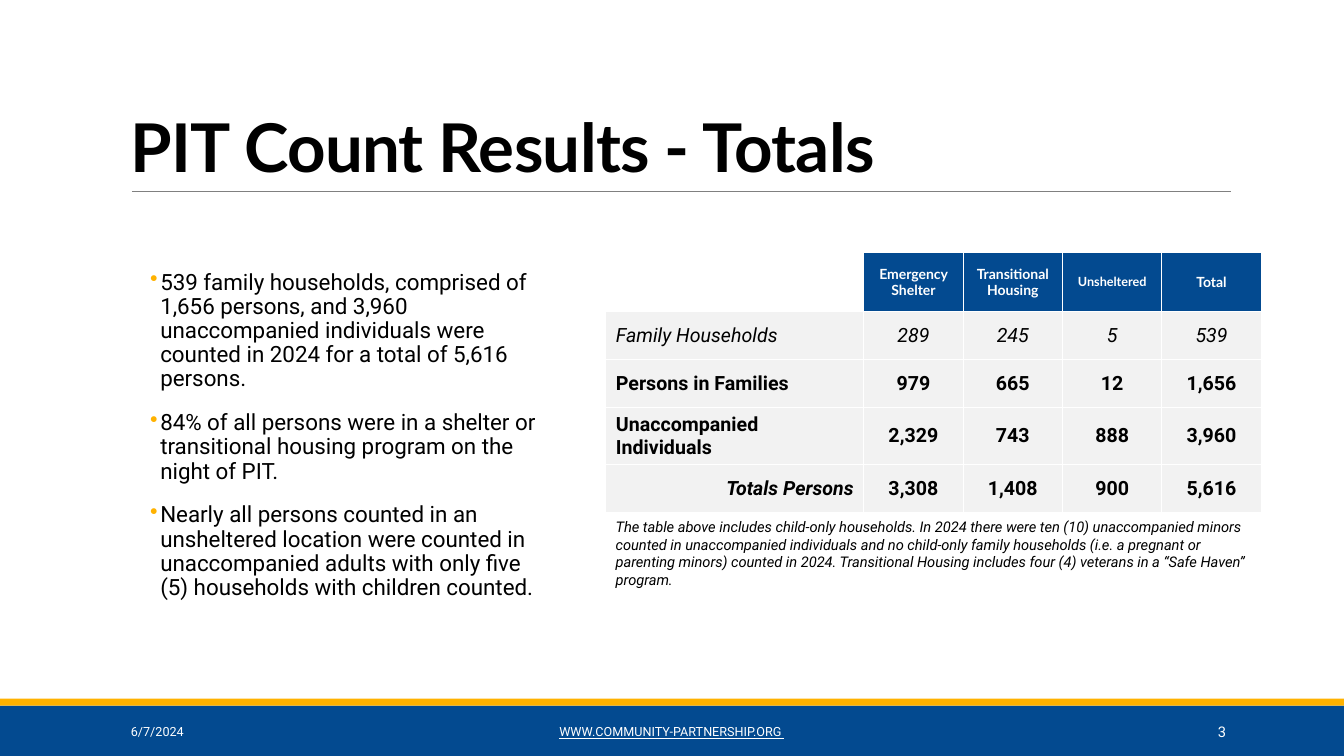
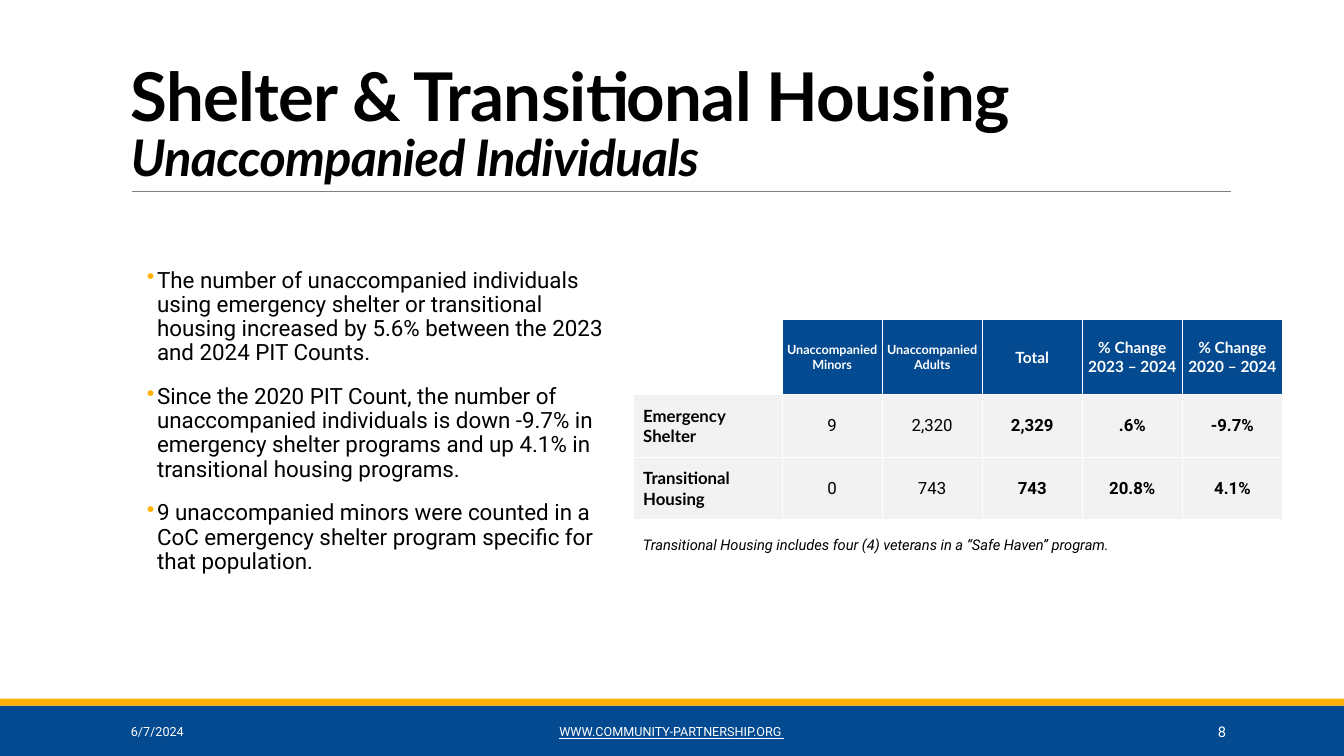
"""Build two slides of homelessness count results, each with bullets, a table and a note."""

import dataclasses
from typing import Optional, Sequence

import lxml.etree
import pptx
import pptx.dml.color
import pptx.enum.shapes
import pptx.enum.text
import pptx.oxml.ns
import pptx.slide
import pptx.table
import pptx.text.text
import pptx.util

Pt = pptx.util.Pt
qn = pptx.oxml.ns.qn
Align = pptx.enum.text.PP_ALIGN
Anchor = pptx.enum.text.MSO_ANCHOR

COLORS = {
    "blue": "034A90",
    "gold": "FFB200",
    "rule": "808080",
    "cell": "F2F2F2",
    "black": "000000",
    "white": "FFFFFF",
}
HEADING_FONT = "Lato"
BODY_FONT = "Roboto"
PAGE_WIDTH, PAGE_HEIGHT = 960, 540
DEFAULT_INSETS = (7.2, 3.6)


@dataclasses.dataclass(frozen=True)
class Style:
    size: float
    font: str = BODY_FONT
    color: str = "black"
    bold: bool = False
    italic: bool = False
    underline: bool = False
    tracking: int = 0


@dataclasses.dataclass(frozen=True)
class Span:
    text: str
    style: Style


@dataclasses.dataclass(frozen=True)
class Frame:
    left: float
    top: float
    width: float
    height: float


@dataclasses.dataclass(frozen=True)
class Cell:
    text: str
    style: Style
    align: Align = Align.CENTER
    fill: str = "cell"


@dataclasses.dataclass(frozen=True)
class Grid:
    left: float
    top: float
    columns: Sequence[float]
    rows: Sequence[float]
    cells: Sequence[Sequence[Optional[Cell]]]
    value_insets: tuple[float, float] = DEFAULT_INSETS


@dataclasses.dataclass(frozen=True)
class Content:
    number: str
    title: Sequence[Span]
    bullets_frame: Frame
    bullets: Sequence[str]
    grid: Grid
    note_frame: Frame
    note: str


TITLE = Style(48, HEADING_FONT, bold=True, tracking=-50)
SUBTITLE = dataclasses.replace(TITLE, size=36, italic=True)
BULLET = Style(16)
NOTE = Style(10.5, italic=True)
FOOTER = Style(9, color="white")
LINK = dataclasses.replace(FOOTER, underline=True)
PAGE_NUMBER = dataclasses.replace(FOOTER, size=10.5)


def rgb(name: str) -> pptx.dml.color.RGBColor:
    """Return a palette colour."""
    return pptx.dml.color.RGBColor.from_string(COLORS[name])


def add_span(para: pptx.text.text._Paragraph, span: Span) -> None:
    """Append one styled run to a paragraph."""
    run = para.add_run()
    run.text = span.text
    font, style = run.font, span.style
    font.size, font.name = Pt(style.size), style.font
    font.bold, font.italic = style.bold, style.italic
    font.underline = style.underline
    font.color.rgb = rgb(style.color)
    if style.tracking:
        run._r.get_or_add_rPr().set("spc", str(style.tracking))


def add_box(
    page: pptx.slide.Slide,
    frame: Frame,
    anchor: Anchor = Anchor.TOP,
    insets: tuple[float, float] = DEFAULT_INSETS,
) -> pptx.text.text.TextFrame:
    """Add a wrapping text box and return its text frame."""
    box = page.shapes.add_textbox(
        Pt(frame.left), Pt(frame.top), Pt(frame.width), Pt(frame.height)
    ).text_frame
    box.word_wrap = True
    box.vertical_anchor = anchor
    box.margin_left = box.margin_right = Pt(insets[0])
    box.margin_top = box.margin_bottom = Pt(insets[1])
    return box


def add_label(
    page: pptx.slide.Slide,
    frame: Frame,
    span: Span,
    align: Align = Align.LEFT,
    anchor: Anchor = Anchor.MIDDLE,
) -> None:
    """Add a text box holding a single run."""
    para = add_box(page, frame, anchor).paragraphs[0]
    para.alignment = align
    add_span(para, span)


def add_band(page: pptx.slide.Slide, frame: Frame, color: str) -> None:
    """Add a plain filled band."""
    band = page.shapes.add_shape(
        pptx.enum.shapes.MSO_SHAPE.RECTANGLE,
        Pt(frame.left), Pt(frame.top), Pt(frame.width), Pt(frame.height),
    )
    band.shadow.inherit = False
    band.fill.solid()
    band.fill.fore_color.rgb = rgb(color)
    band.line.fill.background()


def add_furniture(page: pptx.slide.Slide, number: str) -> None:
    """Add the bands, title rule and footer shared by every slide."""
    add_band(page, Frame(0, 504, PAGE_WIDTH, 36), "blue")
    add_band(page, Frame(0, 499, PAGE_WIDTH, 5), "gold")
    rule = page.shapes.add_connector(
        pptx.enum.shapes.MSO_CONNECTOR.STRAIGHT, Pt(94.3), Pt(136.8), Pt(879), Pt(136.8)
    )
    rule.line.color.rgb = rgb("rule")
    rule.line.width = Pt(0.5)
    lxml.etree.SubElement(rule._element.spPr, qn("a:effectLst"))
    footers = [
        (86.4, 194.4, Span("6/7/2024", FOOTER), Align.LEFT),
        (290.2, 379.4, Span("WWW.COMMUNITY-PARTNERSHIP.ORG ", LINK), Align.CENTER),
        (779.8, 103, Span(number, PAGE_NUMBER), Align.RIGHT),
    ]
    for left, width, span, align in footers:
        add_label(page, Frame(left, 508.3, width, 28.8), span, align)


def add_title(page: pptx.slide.Slide, spans: Sequence[Span]) -> None:
    """Add the title, one line per span."""
    para = add_box(page, Frame(86.4, 22.3, 792, 114.5), Anchor.BOTTOM).paragraphs[0]
    para.line_spacing = 0.85
    for index, span in enumerate(spans):
        if index:
            para.add_line_break()
        add_span(para, span)


def add_bullets(page: pptx.slide.Slide, frame: Frame, texts: Sequence[str]) -> None:
    """Add a list with gold bullets."""
    box = add_box(page, frame, insets=(0, 3.6))
    for index, text in enumerate(texts):
        para = box.add_paragraph() if index else box.paragraphs[0]
        properties = para._p.get_or_add_pPr()
        properties.set("marL", str(Pt(7.2)))
        properties.set("indent", str(-Pt(7.2)))
        color = lxml.etree.SubElement(properties, qn("a:buClr"))
        lxml.etree.SubElement(color, qn("a:srgbClr"), val=COLORS["gold"])
        lxml.etree.SubElement(properties, qn("a:buChar"), char="•")
        para.line_spacing = 0.9
        para.space_before = Pt(12 if index else 0)
        para.space_after = Pt(2)
        add_span(para, Span(text, BULLET))


def set_borders(cell: pptx.table._Cell) -> None:
    """Give a cell thin white borders."""
    properties = cell._tc.get_or_add_tcPr()
    for side in ("lnL", "lnR", "lnT", "lnB"):
        line = lxml.etree.SubElement(properties, qn(f"a:{side}"), w=str(Pt(0.75)))
        fill = lxml.etree.SubElement(line, qn("a:solidFill"))
        lxml.etree.SubElement(fill, qn("a:srgbClr"), val=COLORS["white"])


def fill_cell(
    cell: pptx.table._Cell, content: Optional[Cell], insets: tuple[float, float]
) -> None:
    """Style a table cell and write its lines."""
    set_borders(cell)
    if content is None:
        cell.fill.background()
        return
    cell.fill.solid()
    cell.fill.fore_color.rgb = rgb(content.fill)
    cell.vertical_anchor = Anchor.MIDDLE
    cell.margin_left = cell.margin_right = Pt(insets[0])
    cell.margin_top = cell.margin_bottom = Pt(insets[1])
    for index, text in enumerate(content.text.split("\n")):
        box = cell.text_frame
        para = box.add_paragraph() if index else box.paragraphs[0]
        para.alignment = content.align
        add_span(para, Span(text, content.style))


def add_grid(page: pptx.slide.Slide, grid: Grid) -> None:
    """Add a table."""
    table = page.shapes.add_table(
        len(grid.rows), len(grid.columns), Pt(grid.left), Pt(grid.top),
        Pt(sum(grid.columns)), Pt(sum(grid.rows)),
    ).table
    table.first_row = table.horz_banding = False
    for column, width in zip(table.columns, grid.columns):
        column.width = Pt(width)
    for row, height, contents in zip(table.rows, grid.rows, grid.cells):
        row.height = Pt(height)
        for index, (cell, content) in enumerate(zip(row.cells, contents)):
            fill_cell(cell, content, grid.value_insets if index else DEFAULT_INSETS)


def header_row(*labels: tuple[str, float]) -> list[Optional[Cell]]:
    """Return an empty corner followed by blue headings of given sizes."""
    return [None] + [
        Cell(text, Style(size, HEADING_FONT, "white", bold=True), fill="blue")
        for text, size in labels
    ]


def body_row(
    label: str, label_style: Style, values: str, styles: Sequence[Style], align: Align = Align.LEFT
) -> list[Optional[Cell]]:
    """Return a label cell followed by centred values."""
    return [Cell(label, label_style, align)] + [
        Cell(text, style) for text, style in zip(values.split(), styles)
    ]


def totals_content() -> Content:
    """Return the slide of overall totals."""
    bold = Style(14, bold=True)
    italic = Style(14, italic=True)
    both = Style(14, bold=True, italic=True)
    cells = [
        header_row(("Emergency Shelter", 10), ("Transitional Housing", 10), ("Unsheltered", 9), ("Total", 10)),
        body_row("Family Households", italic, "289 245 5 539", [italic] * 4),
        body_row("Persons in Families", bold, "979 665 12 1,656", [bold] * 4),
        body_row("Unaccompanied Individuals", bold, "2,329 743 888 3,960", [bold] * 4),
        body_row("Totals Persons", both, "3,308 1,408 900 5,616", [bold] * 4, Align.RIGHT),
    ]
    return Content(
        "3",
        [Span("PIT Count Results - Totals", TITLE)],
        Frame(107.3, 190, 278, 270),
        [
            "539 family households, comprised of 1,656 persons, and 3,960 unaccompanied individuals were counted in 2024 for a total of 5,616 persons.",
            "84% of all persons were in a shelter or transitional housing program on the night of PIT.",
            "Nearly all persons counted in an unsheltered location were counted in unaccompanied adults with only five (5) households with children counted.",
        ],
        Grid(432.7, 180.4, [184.3] + [71] * 4, [42.2] + [34.3] * 4, cells),
        Frame(432.7, 366.5, 468, 58.3),
        "The table above includes child-only households. In 2024 there were ten (10) unaccompanied minors counted in unaccompanied individuals and no child-only family households (i.e. a pregnant or parenting minors) counted in 2024. Transitional Housing includes four (4) veterans in a “Safe Haven” program.",
    )


def shelter_content() -> Content:
    """Return the slide on sheltered unaccompanied individuals."""
    label = Style(12, HEADING_FONT, bold=True)
    values = [Style(12)] * 2 + [Style(12, bold=True)] * 3
    cells = [
        header_row(
            ("Unaccompanied Minors", 9), ("Unaccompanied Adults", 9), ("Total", 11),
            ("% Change\n2023 – 2024", 11), ("% Change\n2020 – 2024", 11),
        ),
        body_row("Emergency Shelter", label, "9 2,320 2,329 .6% -9.7%", values),
        body_row("Transitional Housing", label, "0 743 743 20.8% 4.1%", values),
    ]
    return Content(
        "8",
        [Span("Shelter & Transitional Housing", TITLE), Span("Unaccompanied Individuals", SUBTITLE)],
        Frame(105, 188.6, 330, 222.5),
        [
            "The number of unaccompanied individuals using emergency shelter or transitional housing increased by 5.6% between the 2023 and 2024 PIT Counts.",
            "Since the 2020 PIT Count, the number of unaccompanied individuals is down -9.7% in emergency shelter programs and up 4.1% in transitional housing programs.",
            "9 unaccompanied minors were counted in a CoC emergency shelter program specific for that population.",
        ],
        Grid(452.2, 228.4, [106.4] + [71.5] * 5, [53.4] + [44.8] * 2, cells, (0, 0)),
        Frame(452.2, 379.4, 468, 20),
        "Transitional Housing includes four (4) veterans in a “Safe Haven” program.",
    )


def main() -> None:
    """Build and save the deck."""
    deck = pptx.Presentation()
    deck.slide_width, deck.slide_height = Pt(PAGE_WIDTH), Pt(PAGE_HEIGHT)
    for content in (totals_content(), shelter_content()):
        page = deck.slides.add_slide(deck.slide_layouts[6])
        add_furniture(page, content.number)
        add_title(page, content.title)
        add_bullets(page, content.bullets_frame, content.bullets)
        add_grid(page, content.grid)
        add_label(page, content.note_frame, Span(content.note, NOTE), anchor=Anchor.TOP)
    deck.save("out.pptx")


if __name__ == "__main__":
    main()
